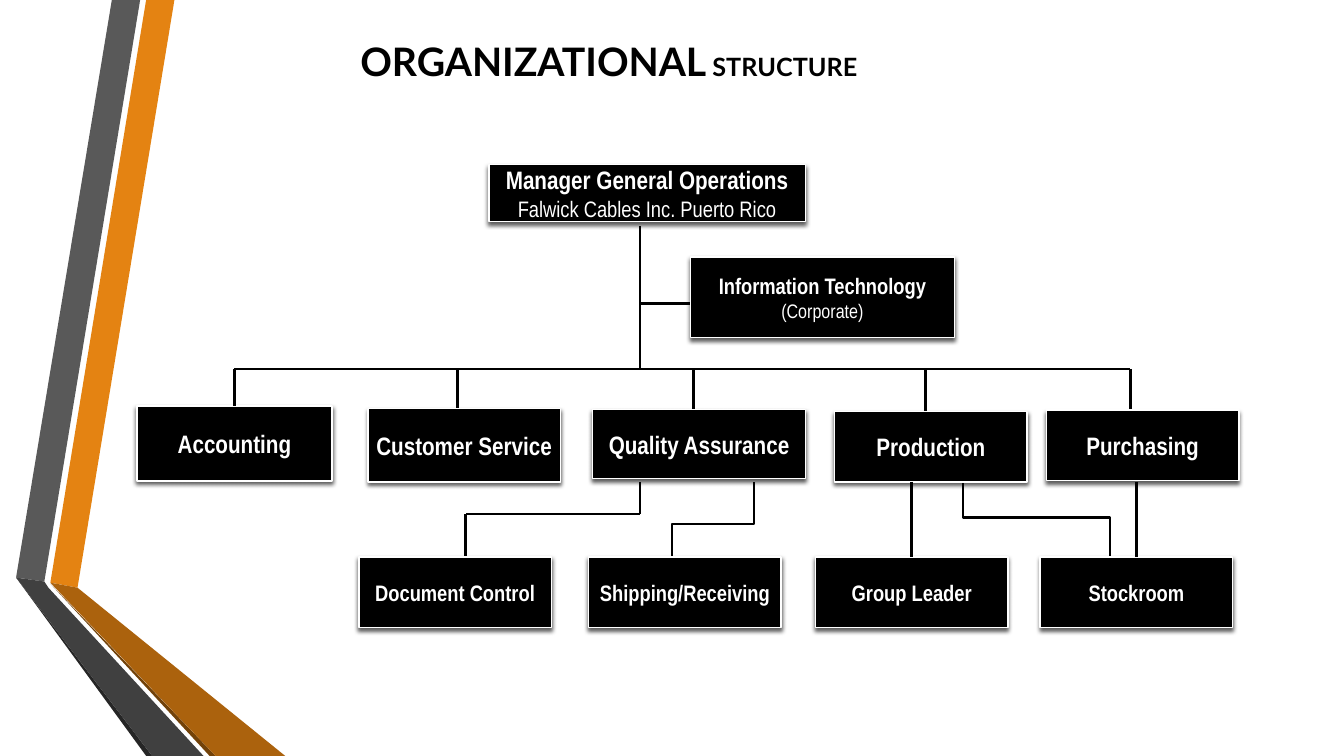
from lxml.etree import SubElement
from pptx import Presentation
from pptx.dml.color import RGBColor
from pptx.enum.shapes import MSO_CONNECTOR, MSO_SHAPE
from pptx.enum.text import MSO_ANCHOR, MSO_AUTO_SIZE, PP_ALIGN
from pptx.oxml.ns import qn
from pptx.util import Pt

BLACK = RGBColor(0x00, 0x00, 0x00)
WHITE = RGBColor(0xFF, 0xFF, 0xFF)
ORANGE = RGBColor(0xE4, 0x83, 0x12)
BROWN = RGBColor(0xAB, 0x62, 0x0D)
DARK_BROWN = RGBColor(0x72, 0x42, 0x09)
GREY = RGBColor(0x59, 0x59, 0x59)
DARK_GREY = RGBColor(0x40, 0x40, 0x40)
CHARCOAL = RGBColor(0x26, 0x26, 0x26)

# Ribbon outlines, from back to front
RIBBONS = [
    (ORANGE, [(36, 416.2), (55.4, 419.8), (124.6, 0), (104.4, 0)]),
    (GREY, [(100.1, 0), (79.9, 0), (11.5, 412.6), (31.7, 415.4)]),
    (CHARCOAL, [(11.5, 412.6), (104.4, 540), (108.7, 540)]),
    (DARK_BROWN, [(36, 416.9), (149.8, 540), (154.1, 540)]),
    (BROWN, [(36, 416.2), (154.1, 540), (203.8, 540), (55.4, 419.8)]),
    (DARK_GREY, [(145.4, 540), (34.6, 419.8), (31.7, 415.4), (11.5, 412.6), (108.7, 540)]),
]

# Chart positions are relative to the chart's top left corner
BUS_Y, STAFF_Y, TRUNK_X = 146, 280.4, 359.2
DEPT_BOTTOM = 226.8
BOX_W, BOX_H = 137.5, 50.4
DEPARTMENTS = [  # name, left, top, width, height
    ("Accounting", 0, 172.8, 139, 53.3),
    ("Customer Service", 164.8, 174.2, BOX_W, 52.6),
    ("Quality Assurance", 325.4, 174.9, 151.9, 49.7),
    ("Production", 498.2, 176.4, BOX_W, BOX_H),
    ("Purchasing", 649.4, 175.6, BOX_W, BOX_H),
]
STAFF = [("Document Control", 158.3), ("Shipping/Receiving", 322.5),
         ("Group Leader", 484.5), ("Stockroom", 645)]
LINES = [  # x1, y1, x2, y2
    (TRUNK_X, 43.9, TRUNK_X, BUS_Y),
    (TRUNK_X, 99.3, 395.2, 99.3),
    (69.5, BUS_Y, 709.5, BUS_Y),
    (TRUNK_X, DEPT_BOTTOM, TRUNK_X, 249.8),
    (TRUNK_X, 249.8, 234.6, 249.8),
    (234.6, 249.8, 234.6, STAFF_Y),
] + [(x, BUS_Y, x, 177) for x in (228.9, 397.4, 563, 709.5)]
ELBOWS = [(589.6, 197.2, 694.7, 307.4), (440.6, DEPT_BOTTOM, 382.2, 287.2)]


def style_line(sp, weight):
    sp.line.color.rgb = BLACK
    sp.line.width = Pt(weight)
    SubElement(sp._element.spPr, qn("a:effectLst"))
    return sp


def add_line(s, x1, y1, x2, y2):
    sp = s.shapes.add_connector(MSO_CONNECTOR.STRAIGHT, Pt(x1), Pt(y1), Pt(x2), Pt(y2))
    return style_line(sp, 1.75)


def add_elbow(s, x1, y1, x2, y2):
    """Down, across, down: an elbow turned a quarter about its centre."""
    cx, cy = (x1 + x2) / 2, (y1 + y2) / 2
    half_w, half_h = (y2 - y1) / 2, abs(x2 - x1) / 2
    rightward = x2 > x1
    start, end = (cx + half_w, cx - half_w) if rightward else (cx - half_w, cx + half_w)
    sp = s.shapes.add_connector(MSO_CONNECTOR.ELBOW, Pt(start), Pt(cy - half_h),
                                Pt(end), Pt(cy + half_h))
    sp._element.spPr.find(qn("a:xfrm")).set("rot", str((270 if rightward else 90) * 60000))
    style_line(sp, 1.5)


def add_box(s, left, top, width, height, lines, border=1, tight=False):
    """Black box; lines holds (text, size, bold) for each paragraph."""
    sp = s.shapes.add_shape(MSO_SHAPE.RECTANGLE, Pt(left), Pt(top), Pt(width), Pt(height))
    sp.fill.solid()
    sp.fill.fore_color.rgb = BLACK
    sp.line.color.rgb = WHITE
    sp.line.width = Pt(border)
    # Soft shadow below the box
    sp.shadow.inherit = False
    effects = sp._element.spPr.find(qn("a:effectLst"))
    shadow = SubElement(effects, qn("a:outerShdw"), blurRad=str(Pt(3)), dist=str(Pt(2)),
                        dir="5400000", rotWithShape="0")
    color = SubElement(shadow, qn("a:srgbClr"), val="000000")
    SubElement(color, qn("a:alpha"), val="64000")
    tf = sp.text_frame
    tf.word_wrap = tight
    tf.vertical_anchor = MSO_ANCHOR.MIDDLE
    tf.margin_left = tf.margin_right = Pt(0 if tight else 10.8)
    tf.margin_top = tf.margin_bottom = Pt(0 if tight else 5)
    for i, (text, size, bold) in enumerate(lines):
        p = tf.add_paragraph() if i else tf.paragraphs[0]
        p.text = text
        p.alignment = PP_ALIGN.CENTER
        font = p.runs[0].font
        font.name, font.size, font.bold = "Arial Narrow", Pt(size), bold
        font.color.rgb = WHITE
    return sp


def add_ribbons(s, left, top):
    for color, points in RIBBONS:
        corners = [(Pt(left + x), Pt(top + y)) for x, y in points]
        builder = s.shapes.build_freeform(*corners[0])
        builder.add_line_segments(corners[1:], close=True)
        sp = builder.convert_to_shape()
        sp.fill.solid()
        sp.fill.fore_color.rgb = color
        sp.line.fill.background()
        sp.shadow.inherit = False


def add_title(s, left, top, width, height):
    sp = s.shapes.title
    sp.left, sp.top, sp.width, sp.height = Pt(left), Pt(top), Pt(width), Pt(height)
    tf = sp.text_frame
    tf.word_wrap = False
    tf.auto_size = MSO_AUTO_SIZE.NONE
    tf.vertical_anchor = MSO_ANCHOR.TOP
    p = tf.paragraphs[0]
    p.alignment = PP_ALIGN.CENTER
    for text, size in (("ORGANIZATIONAL", 28), (" STRUCTURE", 18)):
        r = p.add_run()
        r.text = text
        r.font.name, r.font.size, r.font.bold = "Lato", Pt(size), True
        r.font.color.rgb = BLACK


def add_org_chart(s, left, top):
    def place(x1, y1, x2, y2):
        return left + x1, top + y1, left + x2, top + y2

    # Lines that run behind the boxes
    for ends in ELBOWS:
        add_elbow(s, *place(*ends))
    for ends in LINES:
        add_line(s, *place(*ends))

    # Management
    add_box(s, left + 251.2, top, 226, 41,
            [("Manager General Operations", 18, True),
             ("Falwick Cables Inc. Puerto Rico", 16, False)], tight=True)
    add_box(s, left + 395.2, top + 66.2, 188.6, 57.6,
            [("Information Technology", 16, True), ("(Corporate)", 14, False)])

    # Departments and the staff below them
    boxes = {}
    for name, x, y, width, height in DEPARTMENTS:
        boxes[name] = add_box(s, left + x, top + y, width, height, [(name, 18, True)],
                              border=1.5 if name == "Accounting" else 1)
    for name, x in STAFF:
        boxes[name] = add_box(s, left + x, top + STAFF_Y, BOX_W, BOX_H, [(name, 16, True)])

    # Lines joined to the middle of a box's top side
    for name, x, y in (("Accounting", 69.5, BUS_Y), ("Group Leader", 553.25, DEPT_BOTTOM),
                       ("Stockroom", 713.75, DEPT_BOTTOM)):
        add_line(s, *place(x, y, x, STAFF_Y)).end_connect(boxes[name], 0)


def main():
    prs = Presentation()
    prs.slide_width, prs.slide_height = Pt(960), Pt(540)
    s = prs.slides.add_slide(prs.slide_layouts[5])
    add_ribbons(s, 0, 0)
    add_title(s, 235.4, 23, 399, 41)
    add_org_chart(s, 98, 117.4)
    prs.save("out.pptx")


if __name__ == "__main__":
    main()
